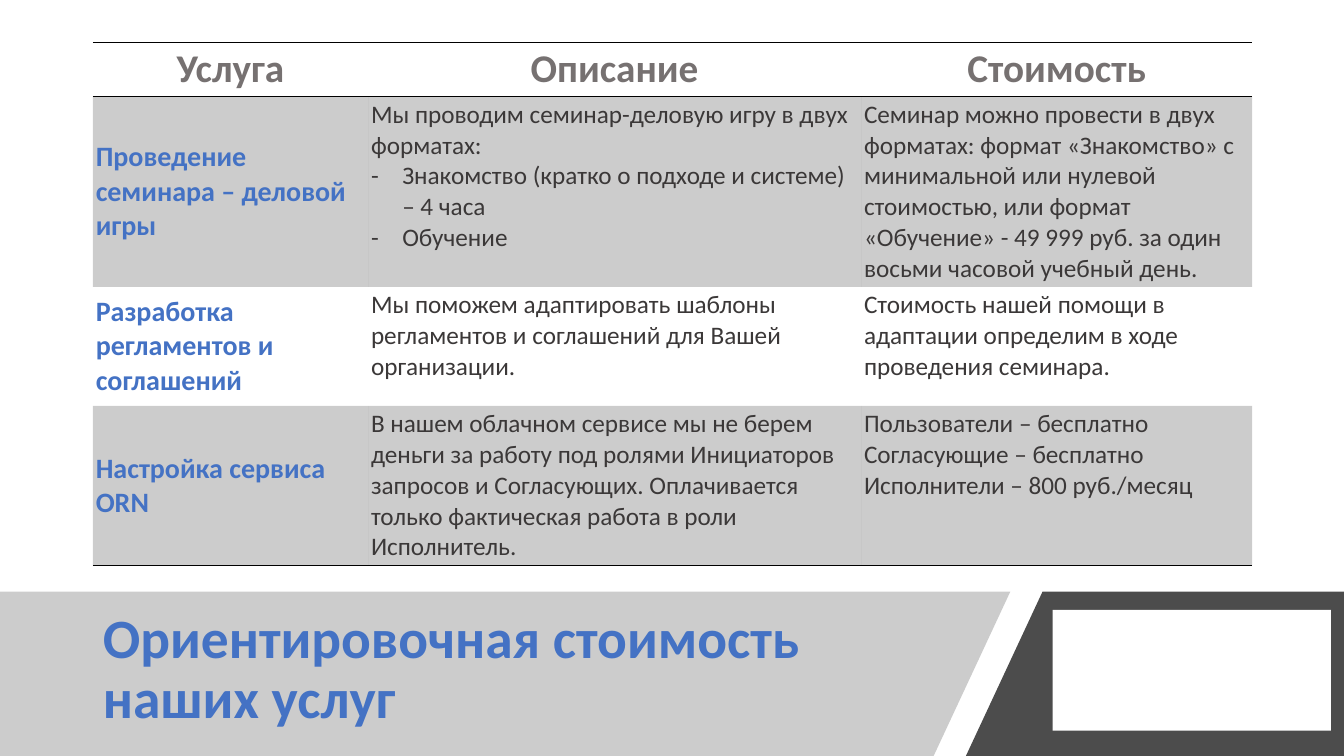
from lxml.etree import SubElement
from pptx import Presentation
from pptx.dml.color import RGBColor
from pptx.enum.shapes import MSO_SHAPE as Preset
from pptx.enum.text import MSO_ANCHOR as Anchor, MSO_AUTO_SIZE as AutoSize, PP_ALIGN as Align
from pptx.oxml import parse_xml
from pptx.oxml.ns import nsdecls, qn
from pptx.util import Inches, Pt

FONT = "Calibri"
BLUE, GREY, DARK, BLACK, WHITE = "4472C4", "767171", "3B3838", "000000", "FFFFFF"
PLAIN_TABLE = "{2D5ABB26-0587-4C30-8999-92F81FD0307C}"
COLUMNS = [2.73, 4.89, 3.88]
ROWS = [0.53, 1.89, 1.18, 1.58]
BULLET = "- "
HEADINGS = ["Услуга", "Описание", "Стоимость"]
SERVICES = [
    ["Проведение семинара – деловой игры",
     "Мы проводим семинар-деловую игру в двух форматах:\n"
     "- Знакомство (кратко о подходе и системе) – 4 часа\n"
     "- Обучение",
     "Семинар можно провести в двух форматах: формат «Знакомство» c минимальной или "
     "нулевой стоимостью, или формат «Обучение» - 49 999 руб. за один восьми часовой "
     "учебный день."],
    ["Разработка регламентов и соглашений",
     "Мы поможем адаптировать шаблоны регламентов и соглашений для Вашей организации.",
     "Стоимость нашей помощи в адаптации определим в ходе проведения семинара."],
    ["Настройка сервиса ORN",
     "В нашем облачном сервисе мы не берем деньги за работу под ролями Инициаторов "
     "запросов и Согласующих. Оплачивается только фактическая работа в роли Исполнитель.",
     "Пользователи – бесплатно\nСогласующие – бесплатно\nИсполнители – 800 руб./месяц"],
]


def rgb(code):
    """Turn a hex string into a colour."""
    return RGBColor.from_string(code)


def paint(fill, properties, color, opacity=100):
    """Give a solid fill, translucent when opacity is below 100."""
    fill.solid()
    fill.fore_color.rgb = rgb(color)
    if opacity < 100:
        tint = properties.find(qn("a:solidFill")).find(qn("a:srgbClr"))
        SubElement(tint, qn("a:alpha"), val=str(opacity * 1000))


def style(paragraph, size, color, bold):
    """Format every run of a paragraph."""
    for run in paragraph.runs:
        font = run.font
        font.name, font.size, font.bold = FONT, Pt(size), bold
        font.color.rgb = rgb(color)


def finish(shape, color, opacity=100):
    """Fill a shape and drop its outline and shadow."""
    paint(shape.fill, shape._element.spPr, color, opacity)
    shape.line.fill.background()
    shape.shadow.inherit = False
    return shape


def add_band(slide, corners, color, opacity):
    """Draw a slanted band through its corners, given in inches."""
    points = [(Inches(x), Inches(y)) for x, y in corners]
    builder = slide.shapes.build_freeform(*points[0])
    builder.add_line_segments(points[1:], close=True)
    return finish(builder.convert_to_shape(), color, opacity)


def place_title(slide, left, top, width, height):
    """Put the slide title in the given box."""
    title = slide.shapes.title
    title.left, title.top = Inches(left), Inches(top)
    title.width, title.height = Inches(width), Inches(height)
    frame = title.text_frame
    frame.text = "Ориентировочная стоимость наших услуг"
    frame.word_wrap, frame.auto_size = True, AutoSize.NONE
    frame.vertical_anchor = Anchor.MIDDLE
    heading = frame.paragraphs[0]
    heading.alignment, heading.line_spacing = Align.LEFT, 0.9
    style(heading, 39.6, BLUE, True)
    return title


def add_footer(slide, left, top, width, height):
    """Lay out the title band, the dark corner and its white plate."""
    right, bottom, slant = left + width, top + height, 0.76
    band_end, corner_start = left + 10.02, left + 10.34
    band = add_band(slide, [(left, top), (band_end, top), (band_end - slant, bottom),
                            (left, bottom)], "808080", 40)
    title = place_title(slide, left + 0.92, top + 0.18, 8.44, 1.2)
    band._element.addnext(title._element)
    add_band(slide, [(corner_start, top), (right, top), (right, bottom),
                     (corner_start - slant, bottom)], BLACK, 70)
    plate = slide.shapes.add_shape(Preset.RECTANGLE, Inches(left + 10.44),
                                   Inches(top + 0.18), Inches(2.76), Inches(1.2))
    finish(plate, WHITE)


def add_rule(cell, side):
    """Draw a thin black border on the top (T) or bottom (B) of a cell."""
    border = parse_xml(
        f'<a:ln{side} {nsdecls("a")} w="12700"><a:solidFill>'
        f'<a:srgbClr val="{BLACK}"/></a:solidFill></a:ln{side}>')
    properties = cell._tc.get_or_add_tcPr()
    properties.insert(len(properties.findall(qn("a:lnT"))), border)


def add_dash(paragraph):
    """Turn a paragraph into a dashed list item."""
    properties = paragraph._p.get_or_add_pPr()
    indent = Inches(0.31)
    properties.set("marL", str(indent))
    properties.set("indent", str(-indent))
    SubElement(properties, qn("a:buFont"), typeface=FONT)
    SubElement(properties, qn("a:buChar"), char=BULLET.strip())


def fill_cell(cell, text, size, color, bold, align=Align.LEFT):
    """Write the lines of a cell, with dashes where they are marked."""
    cell.margin_left = cell.margin_right = Inches(0.03)
    cell.margin_top = cell.margin_bottom = Inches(0.03)
    cell.text_frame.text = text
    for paragraph in cell.text_frame.paragraphs:
        if paragraph.text.startswith(BULLET):
            paragraph.text = paragraph.text.removeprefix(BULLET)
            add_dash(paragraph)
        paragraph.alignment = align
        style(paragraph, size, color, bold)


def add_prices(slide, left, top):
    """Build the price table from its top left corner."""
    frame = slide.shapes.add_table(len(ROWS), len(COLUMNS), Inches(left), Inches(top),
                                   Inches(sum(COLUMNS)), Inches(sum(ROWS)))
    prices = frame.table
    prices._tbl.tblPr.find(qn("a:tableStyleId")).text = PLAIN_TABLE
    for column, width in zip(prices.columns, COLUMNS):
        column.width = Inches(width)
    for row, height in zip(prices.rows, ROWS):
        row.height = Inches(height)
    for index, heading in enumerate(HEADINGS):
        cell = prices.cell(0, index)
        fill_cell(cell, heading, 28, GREY, True, Align.CENTER)
        add_rule(cell, "T")
        add_rule(cell, "B")
        add_rule(prices.cell(len(SERVICES), index), "B")
    for number, service in enumerate(SERVICES, 1):
        for index, text in enumerate(service):
            cell = prices.cell(number, index)
            if index == 0:
                fill_cell(cell, text, 20, BLUE, True)
                cell.vertical_anchor = Anchor.MIDDLE
            else:
                fill_cell(cell, text, 18, DARK, False)
            if number % 2:
                paint(cell.fill, cell._tc.tcPr, BLACK, 20)


def main():
    """Build and save the slide."""
    deck = Presentation()
    deck.slide_width, deck.slide_height = Inches(13.33), Inches(7.5)
    slide = deck.slides.add_slide(deck.slide_layouts[5])
    add_footer(slide, 0, 5.87, 13.33, 1.63)
    add_prices(slide, 0.92, 0.42)
    deck.save("out.pptx")


if __name__ == "__main__":
    main()
